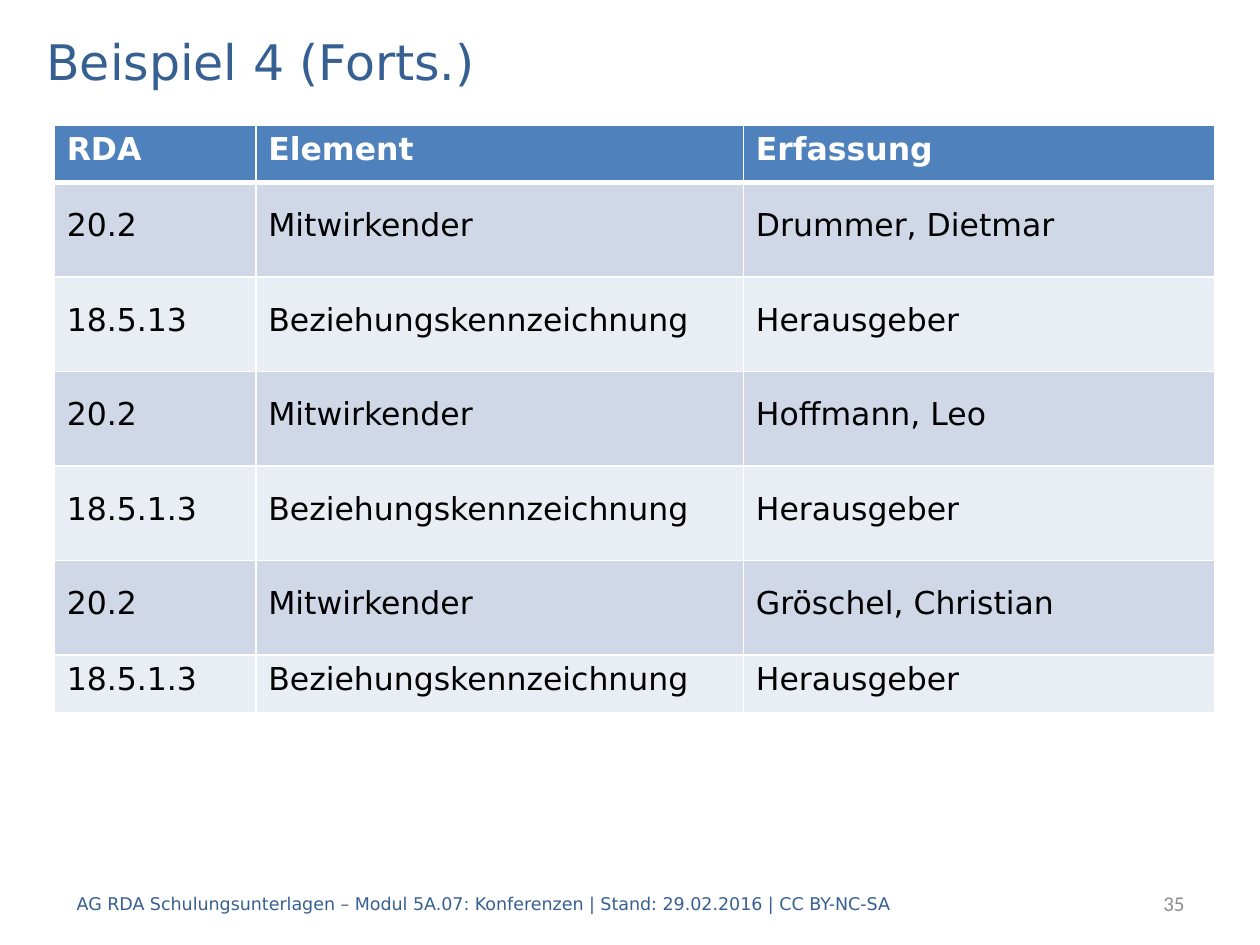
from dataclasses import dataclass

from lxml.etree import SubElement
from pptx import Presentation
from pptx.dml.color import RGBColor as Color
from pptx.enum.text import MSO_ANCHOR as Anchor, PP_ALIGN as Align
from pptx.oxml.ns import qn
from pptx.util import Inches, Pt


@dataclass(frozen=True)
class Theme:
    font: str = "DejaVu Sans"
    number_font: str = "Calibri"
    title_color: str = "376092"
    number_color: str = "8C8C8C"
    header_fill: str = "4F81BD"
    bands: tuple = ("D0D8E8", "E9EDF4")
    white: str = "FFFFFF"
    black: str = "000000"
    title_size: int = 28
    table_size: int = 18
    footer_size: int = 10
    number_size: int = 12


theme = Theme()


def add_span(para, text, size, color, font=theme.font, bold=False):
    span = para.add_run()
    span.text = text
    span.font.size = Pt(size)
    span.font.name = font
    span.font.bold = bold
    span.font.color.rgb = Color.from_string(color)


def add_border(cell, side, width):
    line = SubElement(cell._tc.get_or_add_tcPr(), qn(f"a:ln{side}"), w=str(Pt(width)))
    fill = SubElement(line, qn("a:solidFill"))
    SubElement(fill, qn("a:srgbClr"), val=theme.white)


deck = Presentation()
deck.slide_width, deck.slide_height = Inches(10), Inches(7.5)
page = deck.slides.add_slide(deck.slide_layouts[6])

# Title, footer and page number
footer = "AG RDA Schulungsunterlagen – Modul 5A.07: Konferenzen | Stand: 29.02.2016 | CC BY-NC-SA"
texts = [
    ("Beispiel 4 (Forts.)", (0.27, 0.2, 9.45, 0.56), Align.LEFT,
     theme.title_size, theme.title_color, theme.font),
    (footer, (0.51, 6.97, 8.35, 0.4), Align.LEFT,
     theme.footer_size, theme.title_color, theme.font),
    ("35", (7.91, 6.97, 1.59, 0.4), Align.RIGHT,
     theme.number_size, theme.number_color, theme.number_font),
]
for text, place, align, size, color, font in texts:
    box = page.shapes.add_textbox(*map(Inches, place))
    box.text_frame.word_wrap = True
    box.text_frame.vertical_anchor = Anchor.MIDDLE
    para = box.text_frame.paragraphs[0]
    para.alignment = align
    add_span(para, text, size, color, font)

# Table: a header, then contributor and relationship rows in pairs
rows = [("RDA", "Element", "Erfassung")]
for name, number in [
    ("Drummer, Dietmar", "18.5.13"),
    ("Hoffmann, Leo", "18.5.1.3"),
    ("Gröschel, Christian", "18.5.1.3"),
]:
    rows.append(("20.2", "Mitwirkender", name))
    rows.append((number, "Beziehungskennzeichnung", "Herausgeber"))

widths = [1.6, 3.87, 3.74]
heights = [0.46] + [0.75] * 5 + [0.46]
table = page.shapes.add_table(
    len(rows), len(widths), Inches(0.43), Inches(0.99),
    Inches(sum(widths)), Inches(sum(heights)),
).table
for column, width in zip(table.columns, widths):
    column.width = Inches(width)

for index, (values, height) in enumerate(zip(rows, heights)):
    table.rows[index].height = Inches(height)
    header = index == 0
    for column, text in enumerate(values):
        cell = table.cell(index, column)
        cell.margin_left = cell.margin_right = Inches(0.1)
        cell.margin_top = cell.margin_bottom = Inches(0.05)
        # A thicker line parts the header from the body
        top = 3 if index == 1 else 1
        bottom = 3 if header else 1
        for side, weight in zip("LRTB", (1, 1, top, bottom)):
            add_border(cell, side, weight)
        cell.fill.solid()
        fill = theme.header_fill if header else theme.bands[(index - 1) % 2]
        cell.fill.fore_color.rgb = Color.from_string(fill)
        para = cell.text_frame.paragraphs[0]
        if not header:
            cell.vertical_anchor = Anchor.MIDDLE
            para.line_spacing = Pt(16)
            para.space_before = para.space_after = Pt(6)
        color = theme.white if header else theme.black
        add_span(para, text, theme.table_size, color, bold=header)

deck.save("out.pptx")
